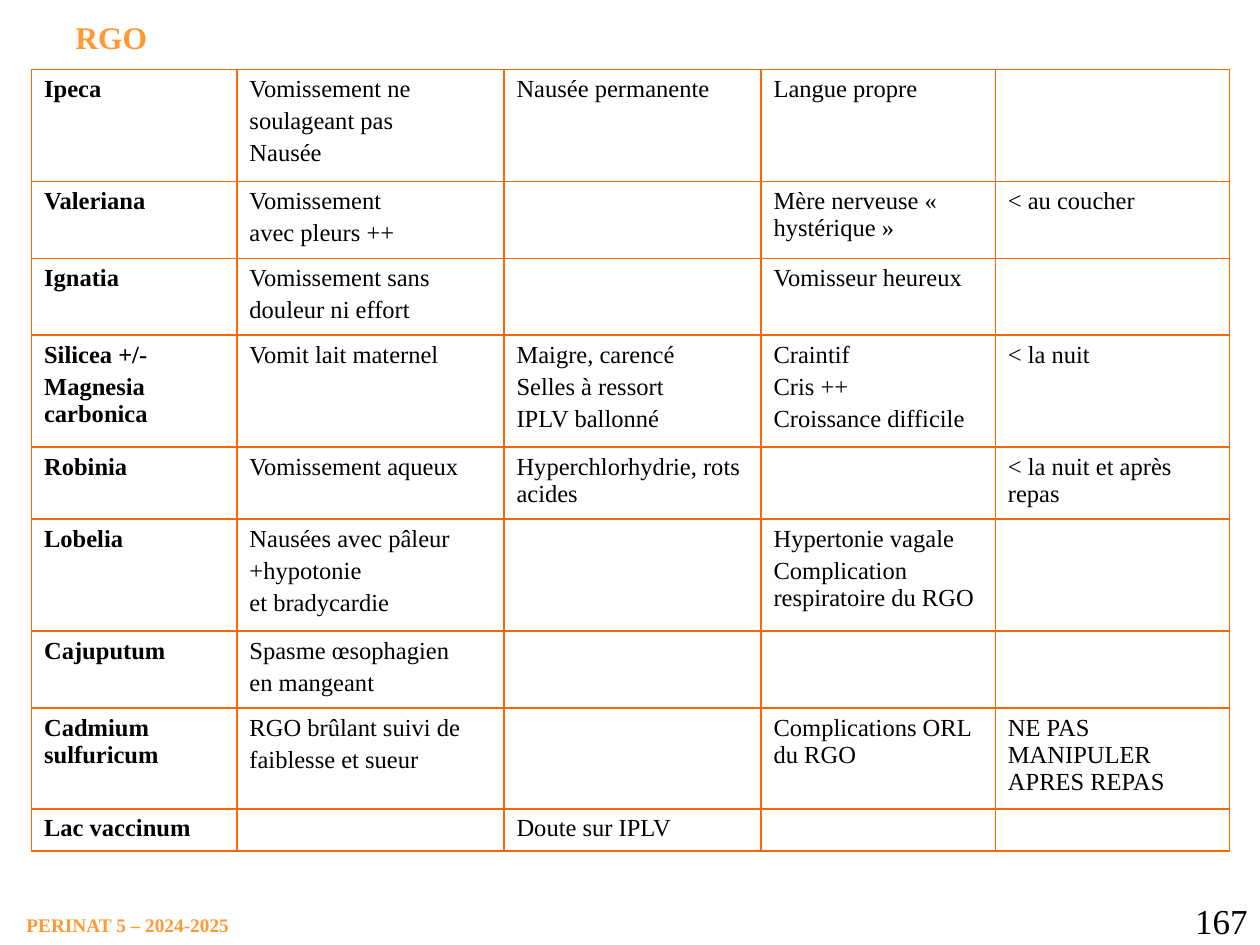
from dataclasses import dataclass

from lxml import etree
from pptx import Presentation
from pptx import util as u
from pptx.dml.color import RGBColor
from pptx.enum import text
from pptx.oxml.ns import qn


@dataclass(frozen=True)
class Theme:
    face: str = "Times New Roman"
    ink: str = "000000"
    accent: str = "FF9933"
    rule: str = "FF6600"
    title: int = 18
    body: int = 14
    foot: int = 11
    page: int = 20
    gap: float = 2.8


COLS = [1.63, 2.12, 2.04, 1.86, 1.86]
ROWS = [
    (0.89, ["Ipeca", "Vomissement ne\nsoulageant pas\nNausée",
            "Nausée permanente", "Langue propre", ""]),
    (0.61, ["Valeriana", "Vomissement\navec pleurs ++", "",
            "Mère nerveuse « hystérique »", "< au coucher"]),
    (0.61, ["Ignatia", "Vomissement sans\ndouleur ni effort", "",
            "Vomisseur heureux", ""]),
    (0.89, ["Silicea +/-\nMagnesia carbonica", "Vomit lait maternel",
            "Maigre, carencé\nSelles à ressort\nIPLV ballonné",
            "Craintif\nCris ++\nCroissance difficile", "< la nuit"]),
    (0.57, ["Robinia", "Vomissement aqueux", "Hyperchlorhydrie, rots acides",
            "", "< la nuit et après repas"]),
    (0.89, ["Lobelia", "Nausées avec pâleur\n+hypotonie\net bradycardie", "",
            "Hypertonie vagale\nComplication respiratoire du RGO", ""]),
    (0.61, ["Cajuputum", "Spasme œsophagien\nen mangeant", "", "", ""]),
    (0.80, ["Cadmium sulfuricum", "RGO brûlant suivi de\nfaiblesse et sueur",
            "", "Complications ORL du RGO", "NE PAS MANIPULER APRES REPAS"]),
    (0.33, ["Lac vaccinum", "", "Doute sur IPLV", "", ""]),
]


class Page:
    def __init__(self, slide, theme):
        self.slide, self.theme = slide, theme

    def lines(self, frame, words, size, color, bold=False, align=None):
        """Fill a text frame, one paragraph for each line of words."""
        look = {"name": self.theme.face, "size": u.Pt(size), "bold": bold}
        for i, line in enumerate(words.split("\n")):
            para = frame.add_paragraph() if i else frame.paragraphs[0]
            para.alignment = align
            if i:
                para.space_before = u.Pt(self.theme.gap)
            run = para.add_run()
            run.text = line
            for key, val in look.items():
                setattr(run.font, key, val)
            run.font.color.rgb = RGBColor.from_string(color)

    def label(self, box, words, size, color, pad=None, wrap=True, **look):
        shape = self.slide.shapes.add_textbox(*map(u.Inches, box))
        frame = shape.text_frame
        frame.word_wrap = wrap
        if pad is not None:
            for side in ("left", "top", "right", "bottom"):
                setattr(frame, f"margin_{side}", u.Inches(pad))
        self.lines(frame, words, size, color, **look)

    def edge(self, cell):
        """Draw the four borders of a cell."""
        props = cell._tc.get_or_add_tcPr()
        for tag in ("a:lnL", "a:lnR", "a:lnT", "a:lnB"):
            line = etree.SubElement(props, qn(tag), w=str(int(u.Pt(1))))
            fill = etree.SubElement(line, qn("a:solidFill"))
            etree.SubElement(fill, qn("a:srgbClr"), val=self.theme.rule)

    def grid(self, left, top, cols, rows):
        size = sum(cols), sum(high for high, _ in rows)
        box = map(u.Inches, (left, top, *size))
        table = self.slide.shapes.add_table(len(rows), len(cols), *box).table
        table.first_row = table.horz_banding = False
        for col, wide in zip(table.columns, cols):
            col.width = u.Inches(wide)
        for row, (high, words) in zip(table.rows, rows):
            row.height = u.Inches(high)
            for i, (cell, word) in enumerate(zip(row.cells, words)):
                self.edge(cell)
                cell.fill.background()
                if word:
                    self.lines(cell.text_frame, word, self.theme.body,
                               self.theme.ink, bold=i == 0)
                else:
                    # an empty cell must not stretch its row
                    para = cell.text_frame.paragraphs[0]._p
                    etree.SubElement(para, qn("a:endParaRPr"),
                                     sz=str(self.theme.body * 100))


def main():
    deck = Presentation()
    deck.slide_width, deck.slide_height = u.Inches(10), u.Inches(7.5)
    theme = Theme()
    page = Page(deck.slides.add_slide(deck.slide_layouts[6]), theme)
    page.label((0.21, 7.25, 1.64, 0.19), "PERINAT 5 – 2024-2025", theme.foot,
               theme.accent, pad=0, wrap=False, bold=True)
    page.label((9.17, 7.09, 0.83, 0.41), "167", theme.page, theme.ink,
               align=text.PP_ALIGN.RIGHT)
    page.grid(0.25, 0.55, COLS, ROWS)
    page.label((0.5, 0.09, 2.83, 0.4), "RGO", theme.title, theme.accent,
               bold=True)
    deck.save("out.pptx")


if __name__ == "__main__":
    main()
